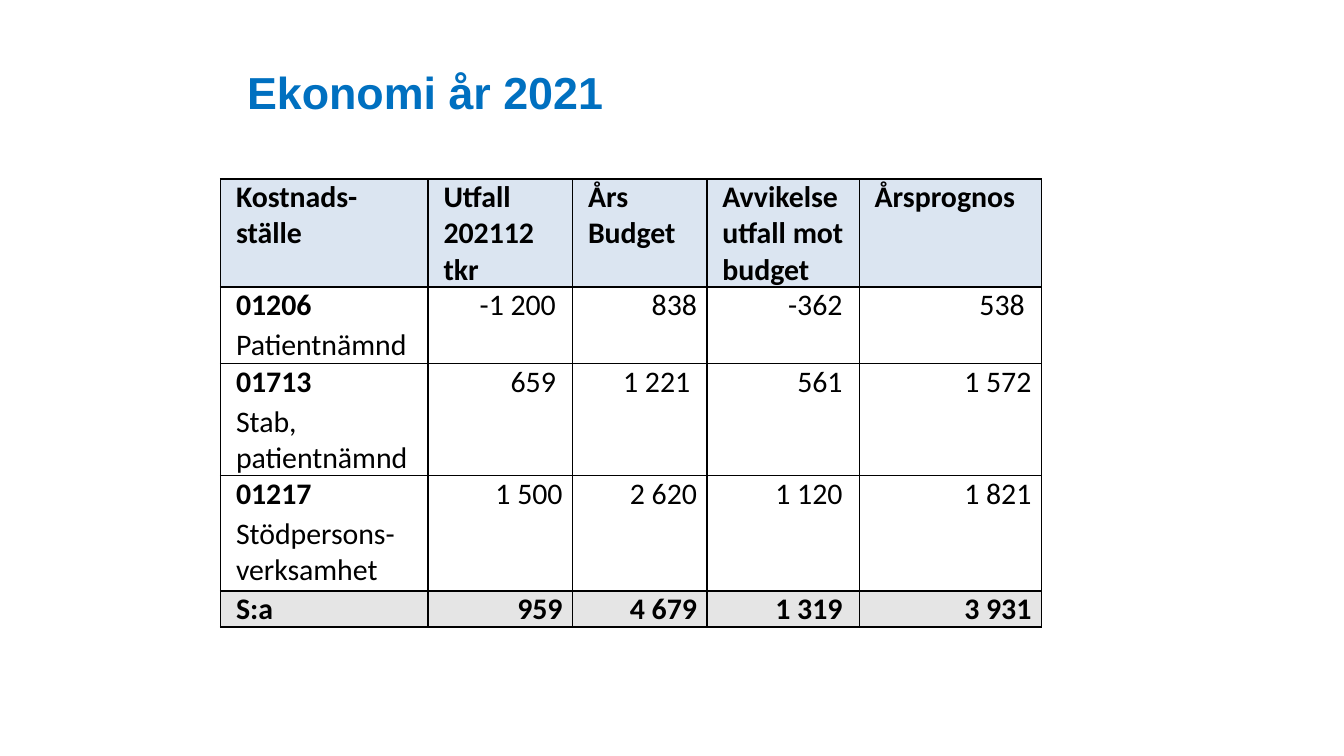
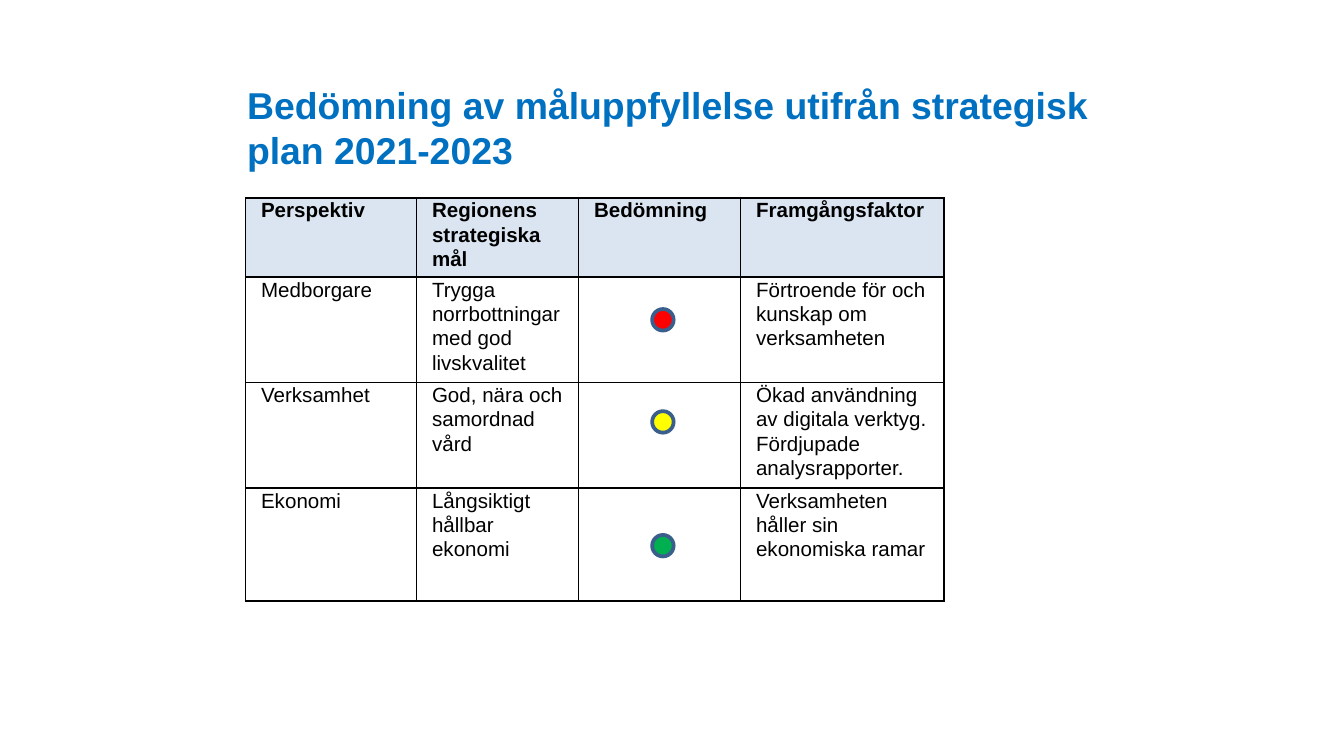
from dataclasses import dataclass

from lxml import etree
from pptx import Presentation
from pptx.dml.color import RGBColor
from pptx.enum.shapes import MSO_SHAPE
from pptx.enum.text import MSO_ANCHOR, PP_ALIGN
from pptx.oxml.ns import qn
from pptx.util import Pt

LEFT, RIGHT = PP_ALIGN.LEFT, PP_ALIGN.RIGHT
BOTTOM = MSO_ANCHOR.BOTTOM
OVAL = MSO_SHAPE.OVAL
BLANK_LAYOUT = 6


@dataclass(frozen=True)
class Theme:
    title_color: str = "0070C0"
    text_color: str = "000000"
    header_fill: str = "DBE5F1"
    body_fill: str = "FFFFFF"
    total_fill: str = "E5E5E5"
    border: str = "000000"
    dot_line: str = "3A5F8C"
    red: str = "FF0000"
    yellow: str = "FFFF00"
    green: str = "00B050"
    heading_font: str = "Arial"
    figure_font: str = "Calibri"
    title_size: float = 24
    long_title_size: float = 20
    figure_size: float = 16
    goal_size: float = 11


THEME = Theme()
CELL_INSET = 5.4
CELL_INDENT = 2.85
DOT_SIZE = 11.5


def rgb(value):
    return RGBColor.from_string(value)


def write_text(frame, text, *, font, size, color=THEME.text_color, bold=False,
               bold_lead=False, align=LEFT, indent=0, before=0, after=0, spacing=1.0):
    """Write one paragraph per line; bold_lead makes only the first line bold."""
    frame.word_wrap = True
    for index, line in enumerate(text.split("\n")):
        para = frame.add_paragraph() if index else frame.paragraphs[0]
        properties = para._p.get_or_add_pPr()
        properties.set("marL", str(Pt(indent)))
        properties.set("indent", "0")
        para.alignment = align
        para.line_spacing = spacing
        para.space_before = Pt(before if index else 0)
        para.space_after = Pt(after)
        span = para.add_run()
        span.text = line
        span.font.name = font
        span.font.size = Pt(size)
        span.font.bold = bold or (bold_lead and index == 0)
        span.font.color.rgb = rgb(color)


def add_title(page, text, size, bottom_inset=3.6):
    box = page.shapes.add_textbox(Pt(125.3), Pt(30.2), Pt(470.9), Pt(65.5))
    frame = box.text_frame
    frame.vertical_anchor = BOTTOM
    frame.margin_bottom = Pt(bottom_inset)
    write_text(frame, text, font=THEME.heading_font, size=size,
               color=THEME.title_color, bold=True)


def style_cell(cell, fill):
    """Set insets, a black line on all four sides, and the fill."""
    cell.margin_left = cell.margin_right = Pt(CELL_INSET)
    cell.margin_top = cell.margin_bottom = 0
    properties = cell._tc.get_or_add_tcPr()
    for side in ("lnL", "lnR", "lnT", "lnB"):
        line = etree.SubElement(properties, qn(f"a:{side}"), w=str(Pt(1)))
        solid = etree.SubElement(line, qn("a:solidFill"))
        etree.SubElement(solid, qn("a:srgbClr"), val=THEME.border)
    cell.fill.solid()
    cell.fill.fore_color.rgb = rgb(fill)


def add_grid(page, rows, left, top, widths, heights, *, total_row=False,
             numeric=False, **text_format):
    """Add a table with a header row and, on request, a total row."""
    frame = page.shapes.add_table(len(rows), len(widths), Pt(left), Pt(top),
                                  Pt(sum(widths)), Pt(sum(heights)))
    table = frame.table
    table.first_row = table.horz_banding = False
    for column, width in zip(table.columns, widths):
        column.width = Pt(width)
    for row_index, (values, height) in enumerate(zip(rows, heights)):
        table.rows[row_index].height = Pt(height)
        is_header = row_index == 0
        is_total = total_row and row_index == len(rows) - 1
        fill = (THEME.header_fill if is_header
                else THEME.total_fill if is_total else THEME.body_fill)
        for column_index, value in enumerate(values):
            cell = table.cell(row_index, column_index)
            style_cell(cell, fill)
            if value:
                is_figure = numeric and column_index > 0 and not is_header
                write_text(cell.text_frame, value, bold=is_header or is_total,
                           bold_lead="\n" in value, indent=CELL_INDENT,
                           align=RIGHT if is_figure else LEFT, **text_format)


def add_dot(page, left, top, color):
    dot = page.shapes.add_shape(OVAL, Pt(left), Pt(top), Pt(DOT_SIZE), Pt(DOT_SIZE))
    dot.shadow.inherit = False
    dot.fill.solid()
    dot.fill.fore_color.rgb = rgb(color)
    dot.line.color.rgb = rgb(THEME.dot_line)
    dot.line.width = Pt(2)


def build_economy(page):
    add_title(page, "Ekonomi år 2021", THEME.title_size, bottom_inset=32)
    rows = [
        ("Kostnads-ställe", "Utfall 202112 tkr", "Års Budget",
         "Avvikelse utfall mot budget", "Årsprognos"),
        ("01206\nPatientnämnd", "-1 200 ", "838", "-362 ", "538 "),
        ("01713\nStab, patientnämnd", "659 ", "1 221 ", "561 ", "1 572"),
        ("01217\nStödpersons-verksamhet", "1 500", "2 620", "1 120 ", "1 821"),
        ("S:a", "959", "4 679", "1 319 ", "3 931"),
    ]
    add_grid(page, rows, 118.2, 95.8, (111.2, 77.4, 72, 81.6, 97.6),
             (58, 41, 60, 62, 19), total_row=True, numeric=True,
             font=THEME.figure_font, size=THEME.figure_size, before=2)


def build_goals(page):
    add_title(page, "Bedömning av måluppfyllelse utifrån strategisk plan 2021-2023",
              THEME.long_title_size)
    rows = [
        ("Perspektiv", "Regionens strategiska mål", "Bedömning", "Framgångsfaktor"),
        ("Medborgare", "Trygga norrbottningar med god livskvalitet", "",
         "Förtroende för och kunskap om verksamheten"),
        ("Verksamhet", "God, nära och samordnad vård", "",
         "Ökad användning av digitala verktyg. Fördjupade analysrapporter."),
        ("Ekonomi", "Långsiktigt hållbar ekonomi", "",
         "Verksamheten håller sin ekonomiska ramar"),
    ]
    add_grid(page, rows, 131.6, 106, (91.6, 86.8, 86.8, 108.8),
             (40, 54.6, 54.6, 60.5), font=THEME.heading_font,
             size=THEME.goal_size, spacing=1.07, after=5)
    # Assessment of each goal
    for top, color in ((165.6, THEME.red), (220.3, THEME.yellow), (286.6, THEME.green)):
        add_dot(page, 349.4, top, color)


def main():
    deck = Presentation()
    deck.slide_width, deck.slide_height = Pt(720), Pt(405)
    for build in (build_economy, build_goals):
        build(deck.slides.add_slide(deck.slide_layouts[BLANK_LAYOUT]))
    deck.save("out.pptx")


if __name__ == "__main__":
    main()
